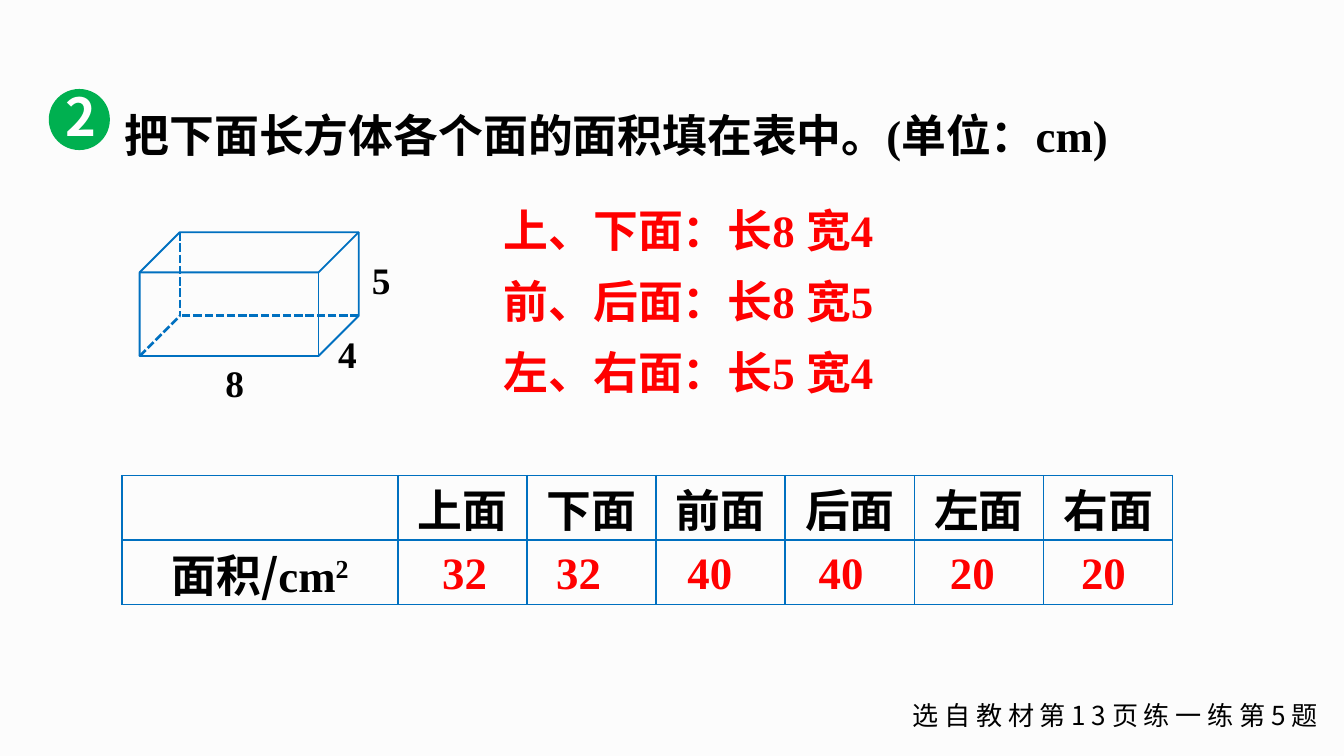
from lxml import etree
from pptx import Presentation
from pptx import util as u
from pptx.dml.color import RGBColor
from pptx.enum import dml, shapes, text
from pptx.oxml import ns

COLORS = {"bg": "FCFCFC", "black": "000000", "white": "FFFFFF",
          "red": "FF0000", "green": "00B050", "blue": "0070C0"}
SANS, SERIF = "Noto Sans CJK SC", "Times New Roman"


def rgb(name):
    """Return the named colour."""
    return RGBColor.from_string(COLORS[name])


def add_run(p, words, size, font, color="black", bold=True):
    """Append one run, with the sans face for Chinese characters."""
    r = p.add_run()
    r.text = words
    r.font.size, r.font.bold, r.font.name = u.Pt(size), bold, font
    r.font.color.rgb = rgb(color)
    ea = etree.SubElement(r.font._element, ns.qn("a:ea"))
    ea.set("typeface", SANS)
    return r


def add_text(s, box, words, size, font, color="black", bold=True,
             align=None, spacing=None, wrap=True):
    """Add a one-paragraph text box and return its run."""
    tf = s.shapes.add_textbox(*map(u.Cm, box)).text_frame
    tf.word_wrap = wrap
    tf.auto_size = text.MSO_AUTO_SIZE.SHAPE_TO_FIT_TEXT
    p = tf.paragraphs[0]
    p.alignment, p.line_spacing = align, spacing
    return add_run(p, words, size, font, color, bold)


def add_heading(s, x, y):
    """Place the numbered badge and the question."""
    sp = s.shapes.add_shape(shapes.MSO_SHAPE.OVAL, *map(u.Cm, (x, y, 1.12, 1.12)))
    sp.shadow.inherit = False
    sp.fill.solid()
    sp.fill.fore_color.rgb = sp.line.color.rgb = rgb("green")
    sp.line.width = u.Pt(1)
    add_text(s, (x + 0.05, y - 0.23, 1.02, 1.45), "2", 28, SANS, "white",
             align=text.PP_ALIGN.CENTER, wrap=False)
    add_text(s, (x + 1.17, y, 21.95, 1.37),
             "把下面长方体各个面的面积填在表中。(单位：cm)", 24, SERIF, spacing=1.2)


def add_cuboid(s, x, y, w, h, depth):
    """Draw the cuboid with its hidden edges and dimensions."""
    sp = s.shapes.add_shape(shapes.MSO_SHAPE.CUBE, *map(u.Cm, (x, y, w, h)))
    sp.shadow.inherit = False
    sp.adjustments[0] = depth / h
    sp.fill.background()
    sp.line.color.rgb = rgb("blue")
    sp.line.width = u.Pt(1)
    corner = (x + depth, y + h - depth)
    for end in ((x + depth, y), (x + w, y + h - depth), (x, y + h)):
        edge = s.shapes.add_connector(shapes.MSO_CONNECTOR.STRAIGHT,
                                      *map(u.Cm, end + corner))
        edge.line.color.rgb = rgb("blue")
        edge.line.width = u.Pt(1.5)
        edge.line.dash_style = dml.MSO_LINE.SQUARE_DOT
        etree.SubElement(edge._element.spPr, ns.qn("a:effectLst"))
    for words, dx, dy in (("8", 1.37, 2.13), ("4", 3.5, 1.57), ("5", 4.14, 0.18)):
        add_text(s, (x + dx, y + dy, 1.4, 1.19), words, 20, SERIF, spacing=1.2)


def add_hints(s, x, y):
    """List the edge lengths of each pair of faces."""
    hints = ("上、下面：长8 宽4", "前、后面：长8 宽5", "左、右面：长5 宽4")
    for i, words in enumerate(hints):
        add_text(s, (x, y + 1.34 * i, 8.43, 1.5), words, 24, SERIF, "red", spacing=1.2)


def style_cell(cell):
    """Clear the fill of a cell and give it blue borders."""
    cell.fill.background()
    cell.vertical_anchor = text.MSO_ANCHOR.MIDDLE
    cell.margin_left = cell.margin_right = u.Cm(0.18)
    cell.margin_top = cell.margin_bottom = 0
    props = cell._tc.get_or_add_tcPr()
    for i, side in enumerate(("lnL", "lnR", "lnT", "lnB")):
        ln = etree.Element(ns.qn("a:" + side), w=str(u.Pt(1)))
        fill = etree.SubElement(ln, ns.qn("a:solidFill"))
        etree.SubElement(fill, ns.qn("a:srgbClr"), val=COLORS["blue"])
        props.insert(i, ln)


def add_areas(s, x, y):
    """Build the table of face areas and lay the answers over it."""
    heads = ("上面", "下面", "前面", "后面", "左面", "右面")
    label_w, col_w, row_h = 5.21, 2.44, 1.22
    frame = s.shapes.add_table(2, 7, *map(u.Cm, (x, y, label_w + 6 * col_w, 2 * row_h)))
    table = frame.table
    table.first_row = table.horz_banding = False
    for i, col in enumerate(table.columns):
        col.width = u.Cm(col_w if i else label_w)
    for row in table.rows:
        row.height = u.Cm(row_h)
    for cell in table.iter_cells():
        style_cell(cell)
        cell.text_frame.paragraphs[0].alignment = text.PP_ALIGN.CENTER
    for i, words in enumerate(heads, 1):
        add_run(table.cell(0, i).text_frame.paragraphs[0], words, 24, SANS)
    p = table.cell(1, 0).text_frame.paragraphs[0]
    add_run(p, "面积/", 24, SANS)
    add_run(p, "cm", 24, SERIF)
    add_run(p, "2", 24, SERIF).font._element.set("baseline", "30000")
    for i, words in enumerate(("32", "32", "40", "40", "20", "20")):
        left, width = (7.34 + 2.48 * (i - 1), 2.57) if i else (5.49, 1.96)
        add_text(s, (x + left, y + 1.19, width, 1.27), words, 24, SERIF, "red",
                 align=text.PP_ALIGN.CENTER)


def add_source(s, x, y):
    """Name the textbook exercise."""
    r = add_text(s, (x, y, 9.75, 0.87), "选自教材第13页练一练第5题", 14, SANS, bold=False)
    r.font._element.set("spc", "300")


def main():
    """Build and save the slide."""
    prs = Presentation()
    prs.slide_width, prs.slide_height = u.Cm(25.4), u.Cm(14.29)
    s = prs.slides.add_slide(prs.slide_layouts[6])
    s.background.fill.solid()
    s.background.fill.fore_color.rgb = rgb("bg")
    add_source(s, 17, 13.1)
    add_heading(s, 0.94, 1.7)
    add_cuboid(s, 2.64, 4.39, 4.14, 2.34, 0.76)
    add_areas(s, 2.31, 8.99)
    add_hints(s, 9.27, 3.51)
    prs.save("out.pptx")


if __name__ == "__main__":
    main()
